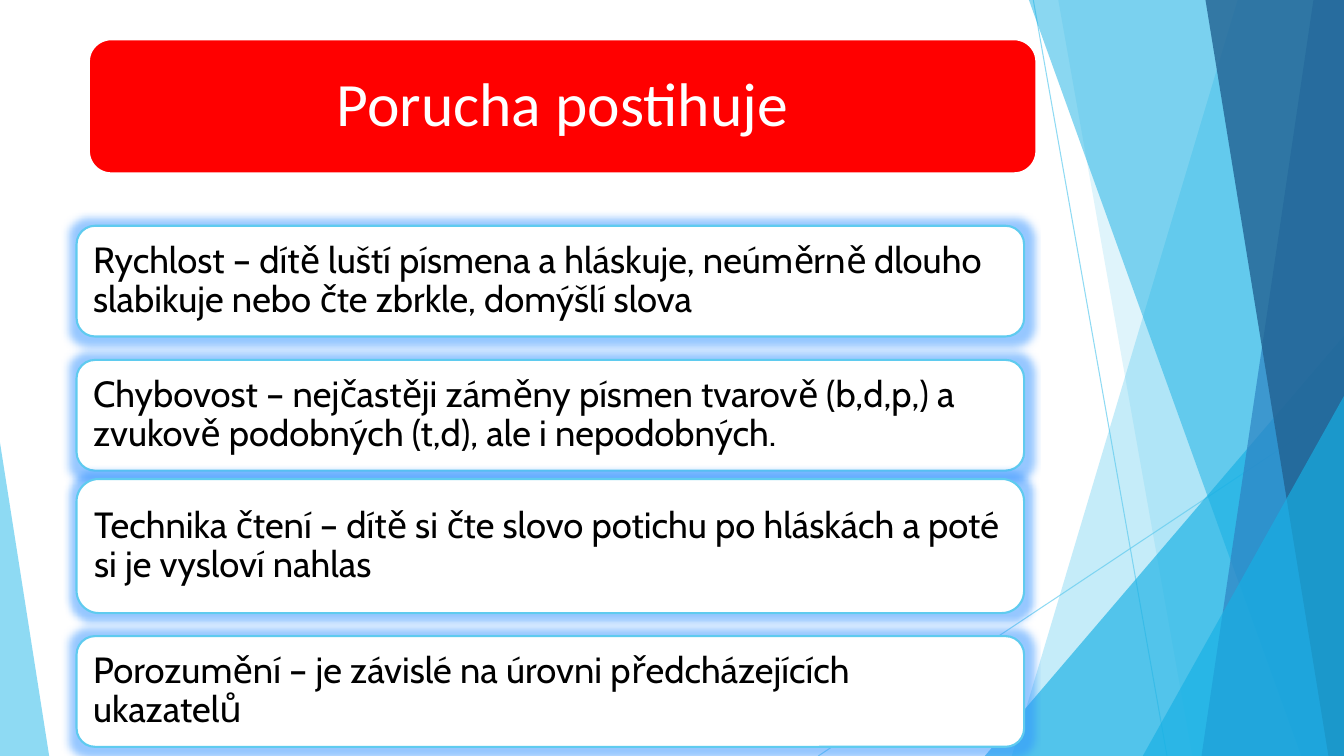
from pptx import Presentation
from pptx.dml.color import RGBColor
from pptx.enum.shapes import MSO_CONNECTOR as Connector, MSO_SHAPE as Shape
from pptx.enum.text import MSO_ANCHOR as Anchor, PP_ALIGN as Align
from pptx.oxml.ns import qn
from pptx.util import Cm, Pt
from lxml.etree import SubElement

WHITE = RGBColor(0xFF, 0xFF, 0xFF)
BLACK = RGBColor(0x00, 0x00, 0x00)
RED = RGBColor(0xFF, 0x00, 0x00)
SKY = RGBColor(0x5F, 0xCB, 0xEF)
CYAN = RGBColor(0x17, 0xB0, 0xE4)
BLUE = RGBColor(0x2E, 0x83, 0xC3)
NAVY = RGBColor(0x22, 0x62, 0x92)
GLOW = RGBColor(0x2E, 0x90, 0xFF)

WIDTH, HEIGHT = 33.87, 19.05
BOX_WIDTH = 23.88

RAYS = [((26.04, 0), (29.41, HEIGHT)), ((WIDTH, 10.24), (20.62, HEIGHT))]
# Left edge at the top, left edge at the bottom, colour, opacity
BANDS_BEHIND = [(31.19, 25.5, SKY, 36), (26.67, 30.05, SKY, 20)]
BANDS_FRONT = [(25.93, 32.79, CYAN, 50), (33.1, 30.28, BLUE, 70),
               (30.38, 33.48, NAVY, 80)]
# Top, height, text
CARDS = [
    (5.69, 2.79, "Rychlost – dítě luští písmena a hláskuje, neúměrně dlouho "
                 "slabikuje nebo čte zbrkle, domýšlí slova"),
    (9.07, 2.79, "Chybovost – nejčastěji záměny písmen tvarově (b,d,p,) a "
                 "zvukově podobných (t,d), ale i nepodobných."),
    (12.07, 3.38, "Technika čtení – dítě si čte slovo potichu po hláskách a "
                  "poté si je vysloví nahlas"),
    (16.03, 2.79, "Porozumění – je závislé na úrovni předcházejících ukazatelů"),
]


def set_opacity(properties, percent):
    for color in properties.iter(qn("a:srgbClr")):
        SubElement(color, qn("a:alpha"), val=str(percent * 1000))


def fill_plain(shape, color, opacity):
    shape.shadow.inherit = False
    shape.fill.solid()
    shape.fill.fore_color.rgb = color
    shape.line.fill.background()
    set_opacity(shape._element.spPr, opacity)


def add_ray(slide, start, end):
    ray = slide.shapes.add_connector(
        Connector.STRAIGHT, *(Cm(value) for value in start + end))
    ray.line.color.rgb = SKY
    ray.line.width = Pt(0.75)
    properties = ray._element.spPr
    set_opacity(properties, 70)
    SubElement(properties, qn("a:effectLst"))


def add_band(slide, top_x, bottom_x, color, opacity):
    """Add a full-height band that runs to the right edge of the slide."""
    builder = slide.shapes.build_freeform(Cm(top_x), 0)
    corners = [(WIDTH, 0), (WIDTH, HEIGHT), (bottom_x, HEIGHT)]
    builder.add_line_segments([(Cm(x), Cm(y)) for x, y in corners])
    fill_plain(builder.convert_to_shape(), color, opacity)


def add_triangle(slide, left, top, width, apex, color, opacity):
    """Add a triangle that stands on the bottom edge of the slide."""
    triangle = slide.shapes.add_shape(
        Shape.ISOSCELES_TRIANGLE, Cm(left), Cm(top), Cm(width), Cm(HEIGHT - top))
    triangle.adjustments[0] = apex
    fill_plain(triangle, color, opacity)


def add_box(slide, left, top, height, fill, line):
    box = slide.shapes.add_shape(
        Shape.ROUNDED_RECTANGLE, Cm(left), Cm(top), Cm(BOX_WIDTH), Cm(height))
    box.shadow.inherit = False
    box.fill.solid()
    box.fill.fore_color.rgb = fill
    box.line.color.rgb = line
    box.line.width = Pt(1.5)
    return box


def add_glow(shape):
    effects = shape._element.spPr.find(qn("a:effectLst"))
    glow = SubElement(effects, qn("a:glow"), rad=str(Pt(11)))
    color = SubElement(glow, qn("a:srgbClr"), val=str(GLOW))
    SubElement(color, qn("a:alpha"), val="50000")


def write_text(shape, text, font_name, size, color, align, inset):
    frame = shape.text_frame
    frame.word_wrap = True
    frame.vertical_anchor = Anchor.MIDDLE
    frame.margin_left = frame.margin_right = Cm(inset)
    frame.margin_top = frame.margin_bottom = Cm(inset)
    paragraph = frame.paragraphs[0]
    paragraph.alignment = align
    paragraph.line_spacing = 0.9
    run = paragraph.add_run()
    run.text = text
    run.font.name = font_name
    run.font.size = Pt(size)
    run.font.color.rgb = color


def add_backdrop(slide):
    for start, end in RAYS:
        add_ray(slide, start, end)
    for band in BANDS_BEHIND:
        add_band(slide, *band)
    add_triangle(slide, 24.82, 8.46, 9.05, 1, CYAN, 66)
    for band in BANDS_FRONT:
        add_band(slide, *band)
    add_triangle(slide, 28.8, 9.98, 5.07, 1, CYAN, 66)
    add_triangle(slide, 0, 11.15, 1.24, 0, SKY, 70)


def main():
    presentation = Presentation()
    presentation.slide_width = Cm(WIDTH)
    presentation.slide_height = Cm(HEIGHT)
    slide = presentation.slides.add_slide(presentation.slide_layouts[6])

    add_backdrop(slide)
    title = add_box(slide, 2.24, 0.99, 3.38, RED, WHITE)
    write_text(title, "Porucha postihuje", "Calibri", 44, WHITE, Align.CENTER, 0.46)
    for top, height, text in CARDS:
        card = add_box(slide, 1.93, top, height, WHITE, SKY)
        add_glow(card)
        write_text(card, text, "Cabin", 26, BLACK, Align.LEFT, 0.28)

    presentation.save("out.pptx")


if __name__ == "__main__":
    main()
